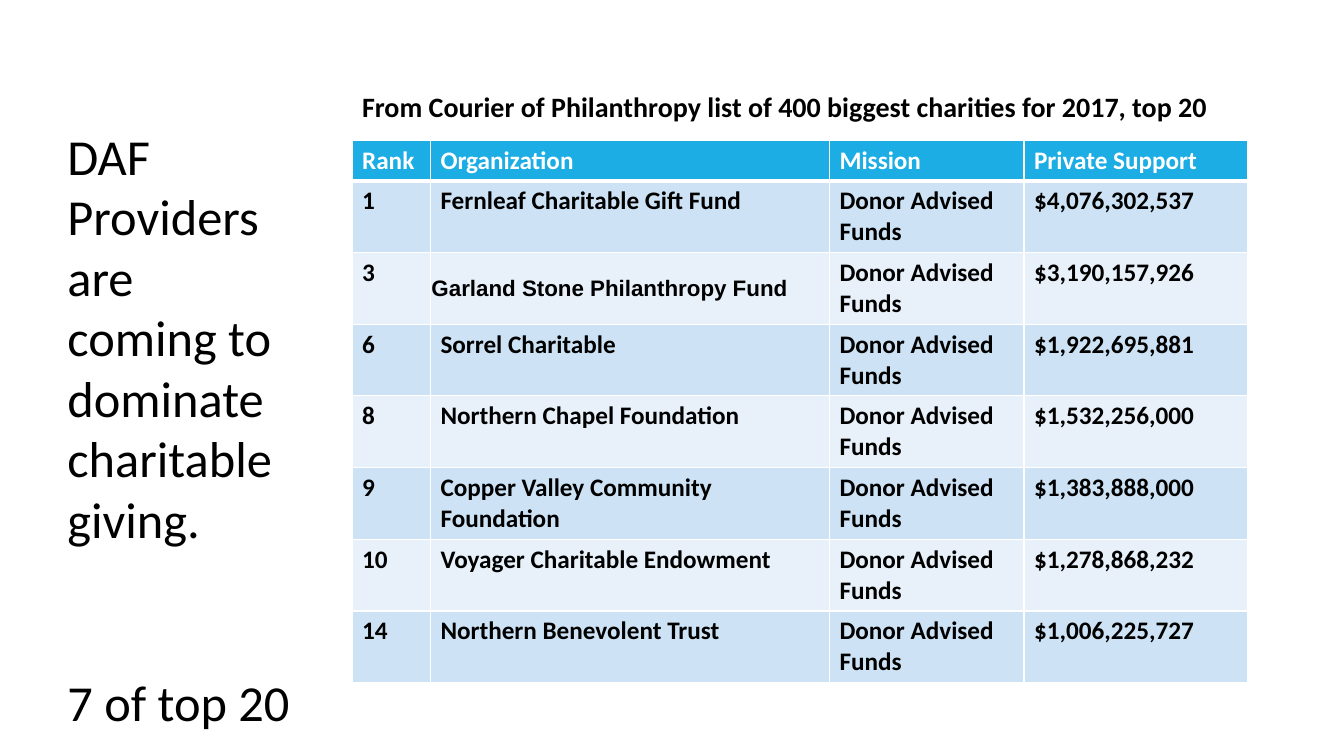
"""Build a slide on donor advised funds among the biggest charities."""
from dataclasses import dataclass

from lxml.etree import SubElement
from pptx import Presentation
from pptx.dml.color import RGBColor
from pptx.enum.text import MSO_ANCHOR as Anchor, MSO_AUTO_SIZE as AutoSize, PP_ALIGN as Align
from pptx.oxml.ns import qn
from pptx.util import Pt

WHITE = RGBColor(0xFF, 0xFF, 0xFF)
BLACK = RGBColor(0x00, 0x00, 0x00)
HEADER_BLUE = RGBColor(0x1C, 0xAD, 0xE4)
BANDS = (RGBColor(0xCD, 0xE3, 0xF5), RGBColor(0xE8, 0xF1, 0xFA))

HEADINGS = ("Rank", "Organization", "Mission", "Private Support")
COLUMN_WIDTHS = (56, 285, 139, 160)
HEADER_HEIGHT = 29.2
ROW_HEIGHT = 51.2
TABLE_LEFT = 251.5
TABLE_TOP = 100


@dataclass(frozen=True)
class Charity:
    rank: int
    name: str
    support: int
    pasted: bool = False


CHARITIES = (
    Charity(1, "Fernleaf Charitable Gift Fund", 4_076_302_537),
    Charity(3, "Garland Stone Philanthropy Fund", 3_190_157_926, pasted=True),
    Charity(6, "Sorrel Charitable", 1_922_695_881),
    Charity(8, "Northern Chapel Foundation", 1_532_256_000),
    Charity(9, "Copper Valley Community Foundation", 1_383_888_000),
    Charity(10, "Voyager Charitable Endowment", 1_278_868_232),
    Charity(14, "Northern Benevolent Trust", 1_006_225_727),
)


def write(para, text: str, *, size: float, color: RGBColor = BLACK,
          bold: bool = False, font: str = "Calibri", before: float = 0) -> None:
    para.alignment = Align.LEFT
    para.space_before = Pt(before)
    span = para.add_run()
    span.text = text
    span.font.name = font
    span.font.size = Pt(size)
    span.font.bold = bold
    span.font.color.rgb = color


def add_borders(cell, bottom: float) -> None:
    properties = cell._tc.get_or_add_tcPr()
    for side, width in (("L", 1), ("R", 1), ("T", 1), ("B", bottom)):
        line = SubElement(properties, qn(f"a:ln{side}"), w=str(Pt(width)))
        fill = SubElement(line, qn("a:solidFill"))
        SubElement(fill, qn("a:srgbClr"), val=str(WHITE))


def fill_cell(cell, text: str, *, fill: RGBColor, color: RGBColor = BLACK,
              bottom: float = 1, pasted: bool = False) -> None:
    add_borders(cell, bottom)
    cell.fill.solid()
    cell.fill.fore_color.rgb = fill
    size, font = (16, "Arial") if pasted else (18, "Calibri")
    write(cell.text_frame.paragraphs[0], text, size=size, font=font, color=color, bold=True)
    if pasted:
        cell.vertical_anchor = Anchor.MIDDLE
        cell.margin_left = cell.margin_right = cell.margin_top = Pt(0.75)
        cell.margin_bottom = Pt(0)


def add_charity_table(page) -> None:
    height = HEADER_HEIGHT + ROW_HEIGHT * len(CHARITIES)
    table = page.shapes.add_table(
        len(CHARITIES) + 1, len(HEADINGS), Pt(TABLE_LEFT), Pt(TABLE_TOP),
        Pt(sum(COLUMN_WIDTHS)), Pt(height)).table
    for column, width in zip(table.columns, COLUMN_WIDTHS):
        column.width = Pt(width)
    for index, row in enumerate(table.rows):
        row.height = Pt(ROW_HEIGHT if index else HEADER_HEIGHT)
    for column, heading in enumerate(HEADINGS):
        fill_cell(table.cell(0, column), heading, fill=HEADER_BLUE, color=WHITE, bottom=3)
    for index, charity in enumerate(CHARITIES):
        values = (str(charity.rank), charity.name, "Donor Advised Funds", f"${charity.support:,}")
        for column, value in enumerate(values):
            fill_cell(table.cell(index + 1, column), value, fill=BANDS[index % 2],
                      pasted=charity.pasted and column == 1)


def set_frame(box, left: float, top: float, width: float, height: float):
    box.left, box.top, box.width, box.height = Pt(left), Pt(top), Pt(width), Pt(height)
    frame = box.text_frame
    frame.word_wrap = True
    frame.auto_size = AutoSize.NONE
    frame.vertical_anchor = Anchor.TOP
    return frame


def main() -> None:
    deck = Presentation()
    deck.slide_width, deck.slide_height = Pt(960), Pt(540)
    page = deck.slides.add_slide(deck.slide_layouts[5])

    message = set_frame(page.shapes.title, 41, 85.7, 174, 356.4)
    write(message.paragraphs[0], "DAF Providers are coming to dominate charitable giving.", size=36)
    write(message.add_paragraph(), "7 of top 20", size=36, before=88)

    add_charity_table(page)

    caption = set_frame(page.shapes.add_textbox(0, 0, 0, 0), TABLE_LEFT, 60.5, 661, 31.7)
    write(caption.paragraphs[0],
          "From Courier of Philanthropy list of 400 biggest charities for 2017, top 20",
          size=20, bold=True)
    deck.save("out.pptx")


if __name__ == "__main__":
    main()
